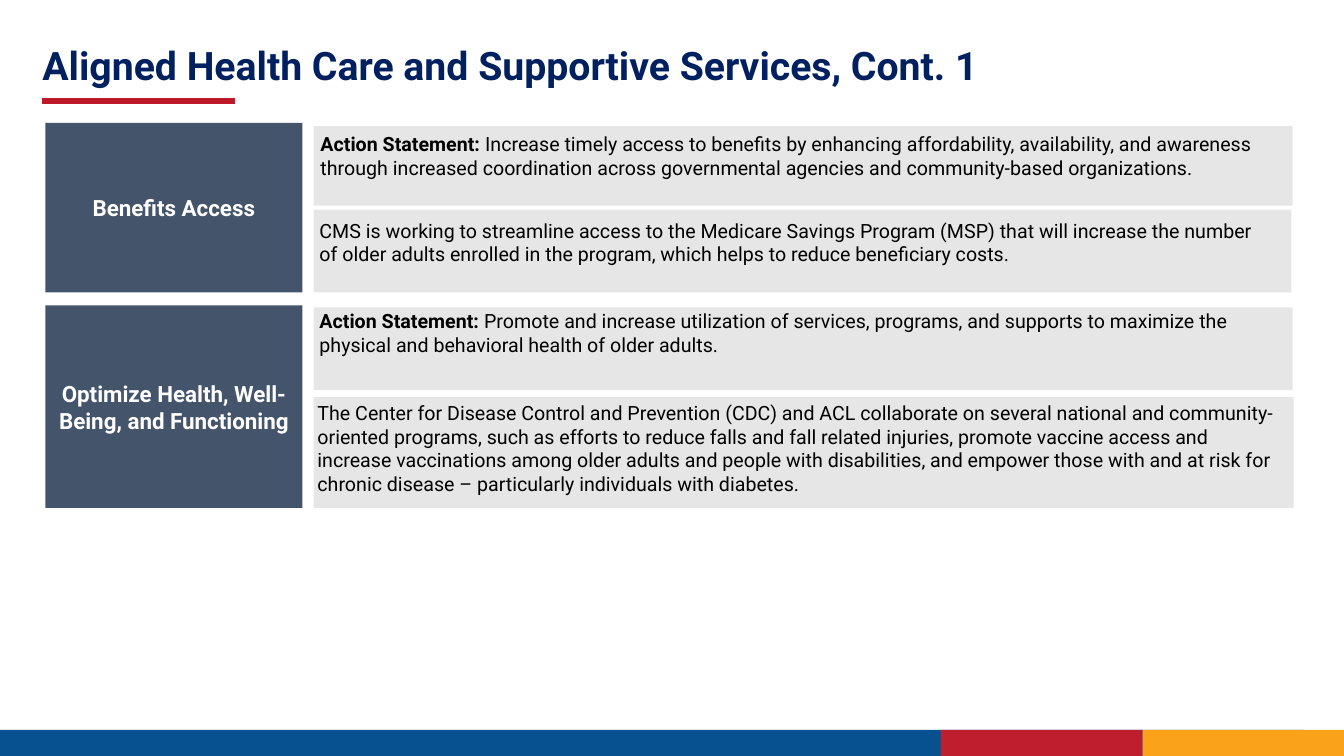
from lxml.etree import SubElement
from pptx import Presentation
from pptx.dml.color import RGBColor
from pptx.enum.shapes import MSO_CONNECTOR, MSO_SHAPE
from pptx.enum.text import MSO_ANCHOR, MSO_AUTO_SIZE, PP_ALIGN
from pptx.oxml.ns import qn
from pptx.util import Inches, Pt

COLORS = {
    "navy": "002060", "rule": "BE1929", "slate": "44546A", "panel": "E7E6E6",
    "blue": "075190", "gold": "F9A21A", "red": "BE1E2D",
    "white": "FFFFFF", "black": "000000",
}

# left, width, colour
FOOTER_BANDS = [(0, 12.93, "blue"), (11.33, 2, "gold"), (9.33, 2, "red")]

# Each panel: rectangle, text place, bold lead, text
TOPICS = [
    ("Benefits Access", (0.45, 1.22, 2.55, 1.68), [
        ((3.11, 1.25, 9.71, 0.79), (3.08, 1.26, 9.65, 0.81), "Action Statement: ",
         "Increase timely access to benefits by enhancing affordability, availability, "
         "and awareness through increased coordination across governmental agencies and "
         "community-based organizations."),
        ((3.11, 2.08, 9.7, 0.82), (3.07, 2.12, 9.55, 0.57), "",
         "CMS is working to streamline access to the Medicare Savings Program (MSP) that "
         "will increase the number of older adults enrolled in the program, which helps "
         "to reduce beneficiary costs."),
    ]),
    ("Optimize Health, Well-Being, and Functioning", (0.45, 3.03, 2.55, 2.01), [
        ((3.11, 3.05, 9.71, 0.82), (3.07, 3.02, 9.72, 0.57), "Action Statement: ",
         "Promote and increase utilization of services, programs, and supports to "
         "maximize the physical and behavioral health of older adults."),
        ((3.11, 3.94, 9.72, 1.1), (3.05, 3.93, 9.71, 1.04), "",
         "The Center for Disease Control and Prevention (CDC) and ACL collaborate on "
         "several national and community-oriented programs, such as efforts to reduce "
         "falls and fall related injuries, promote vaccine access and increase "
         "vaccinations among older adults and people with disabilities, and empower "
         "those with and at risk for chronic disease – particularly individuals with "
         "diabetes."),
    ]),
]


def color(name):
    return RGBColor.from_string(COLORS[name])


def inches(place):
    return [Inches(length) for length in place]


def add_span(para, text, size=14, bold=False, ink="black"):
    span = para.add_run()
    span.text = text
    span.font.name = "Roboto"
    span.font.size = Pt(size)
    span.font.bold = bold
    span.font.color.rgb = color(ink)


def add_title(page, text):
    title = page.shapes.title
    title.left, title.top, title.width, title.height = inches((0.32, 0.21, 12, 0.92))
    title.text_frame.vertical_anchor = MSO_ANCHOR.MIDDLE
    para = title.text_frame.paragraphs[0]
    para.alignment = PP_ALIGN.LEFT
    para.line_spacing = 0.9
    add_span(para, text, size=28, bold=True, ink="navy")


def add_rule(page):
    """Draw the short red line under the title."""
    rule = page.shapes.add_connector(MSO_CONNECTOR.STRAIGHT, *inches((0.42, 1, 2.33, 1)))
    rule.line.color.rgb = color("rule")
    rule.line.width = Pt(4.5)
    SubElement(rule.element.spPr, qn("a:effectLst"))


def add_block(page, place, fill):
    block = page.shapes.add_shape(MSO_SHAPE.RECTANGLE, *inches(place))
    block.shadow.inherit = False
    block.fill.solid()
    block.fill.fore_color.rgb = color(fill)
    block.line.fill.background()
    return block


def add_heading(page, place, text):
    frame = add_block(page, place, "slate").text_frame
    frame.word_wrap = True
    frame.vertical_anchor = MSO_ANCHOR.MIDDLE
    para = frame.paragraphs[0]
    para.alignment = PP_ALIGN.CENTER
    add_span(para, text, size=16, bold=True, ink="white")


def add_statement(page, place, lead, text):
    frame = page.shapes.add_textbox(*inches(place)).text_frame
    frame.word_wrap = True
    frame.auto_size = MSO_AUTO_SIZE.SHAPE_TO_FIT_TEXT
    para = frame.paragraphs[0]
    if lead:
        add_span(para, lead, bold=True)
    add_span(para, text)


def main():
    deck = Presentation()
    deck.slide_width, deck.slide_height = Inches(13.33), Inches(7.5)
    page = deck.slides.add_slide(deck.slide_layouts[5])
    for left, width, fill in FOOTER_BANDS:
        add_block(page, (left, 7.24, width, 0.26), fill)
    add_title(page, "Aligned Health Care and Supportive Services, Cont. 1")
    add_rule(page)
    for heading, heading_place, panels in TOPICS:
        add_heading(page, heading_place, heading)
        for panel_place, text_place, lead, text in panels:
            add_block(page, panel_place, "panel")
            add_statement(page, text_place, lead, text)
    deck.save("out.pptx")


if __name__ == "__main__":
    main()
